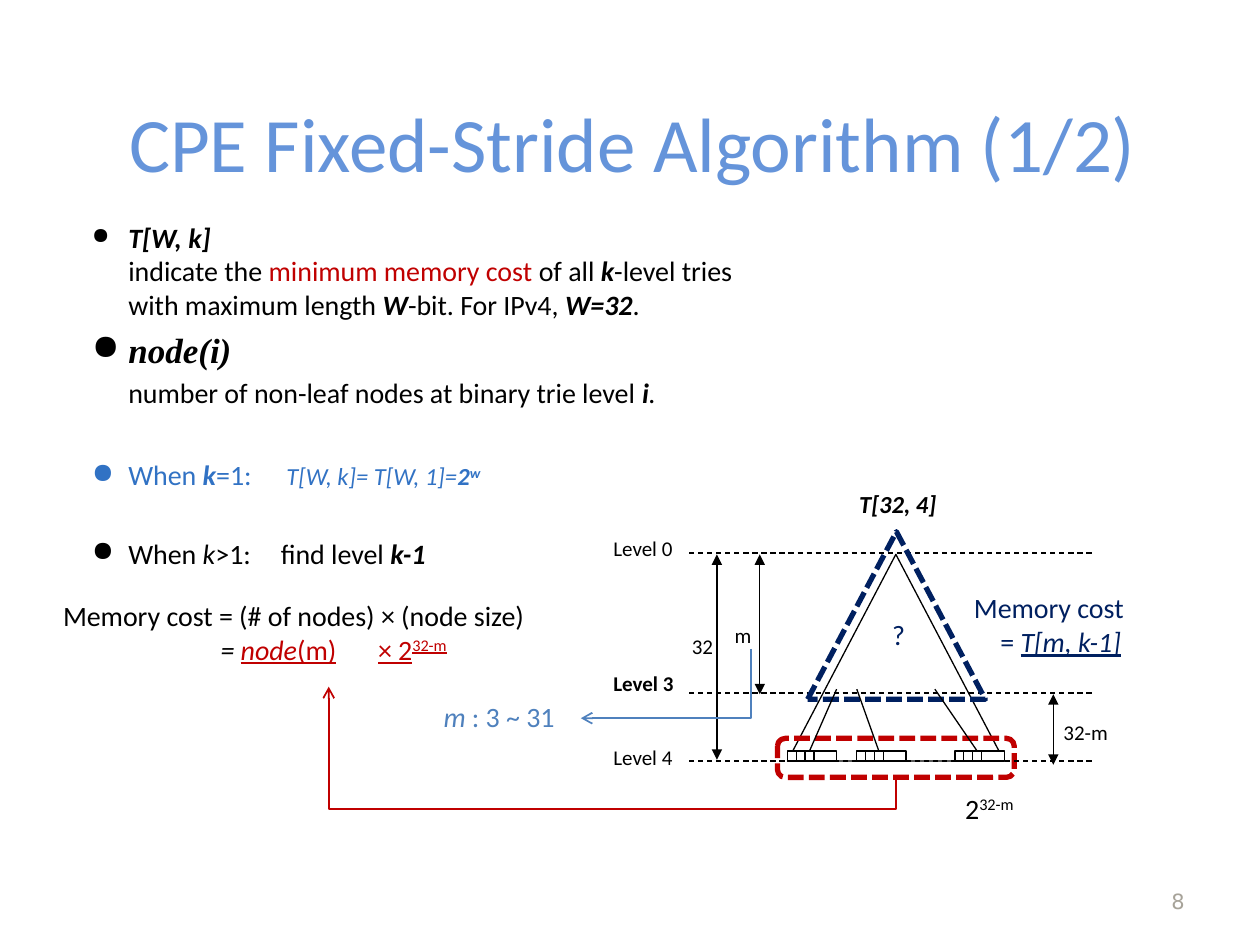
"""Build a slide on the fixed-stride trie algorithm with its level diagram."""
from copy import deepcopy
from pptx import Presentation
from pptx.dml.color import RGBColor
from pptx.enum.dml import MSO_LINE
from pptx.enum.shapes import MSO_CONNECTOR, MSO_SHAPE
from pptx.enum.text import MSO_ANCHOR, PP_ALIGN
from pptx.oxml.ns import qn
from pptx.util import Inches, Pt
from lxml.etree import SubElement

BLACK = RGBColor(0, 0, 0)
WHITE = RGBColor(255, 255, 255)
RED = RGBColor(0xC0, 0, 0)
NAVY = RGBColor(0, 0x20, 0x60)
BLUE = RGBColor(0x31, 0x72, 0xC4)
STEEL = RGBColor(0x4F, 0x81, 0xBD)
SKY = RGBColor(0x65, 0x94, 0xDA)
GRAY = RGBColor(0xA7, 0xA3, 0x99)

TITLE = "CPE Fixed-Stride Algorithm (1/2)"
HANG = (0.29, -0.29)
BODY = [
    dict(runs=[("T[W, k]\n", "bi"), ("indicate the ", ""), ("minimum memory cost ", "", RED),
               ("of all ", ""), ("k", "bi"), ("-level tries\nwith maximum length ", ""),
               ("W", "bi"), ("-bit. For IPv4, ", ""), ("W=32", "bi"), (".", "")],
         indent=HANG, before=3, bullet=80),
    dict(runs=[("node(i)", "bi", BLACK, 20, "Times New Roman")],
         indent=HANG, before=4, bullet=100),
    dict(runs=[("number of non-leaf nodes at binary trie level ", ""), ("i", "bi"), (".", "i")],
         indent=(0.29, 0), before=3),
    dict(runs=[("When ", "", BLUE), ("k", "bi", BLUE), ("=1:", "", BLUE),
               ("\t T[W, k]= T[W, 1]=", "i", BLUE, 14), ("2", "bi", BLUE, 14),
               ("w", "bi^", BLUE, 14)],
         indent=HANG, before=28, bullet=100),
    dict(runs=[("When ", ""), ("k", "i"), (">1:\tfind level ", ""), ("k-1", "bi")],
         indent=HANG, before=25.5, bullet=100),
]
COST = [
    dict(runs=[("Memory cost = (# of nodes) × (node size)", "")]),
    dict(runs=[("= ", "i"), ("node", "iu", RED), ("(m)\t× 2", "u", RED), ("32-m", "u^", RED)],
         indent=(0, 1.25), tab=2.52),
]
SUB = [
    dict(runs=[("Memory cost", "", NAVY)]),
    dict(runs=[("= ", "", NAVY), ("T[m, k-1]", "iu", NAVY)], indent=(0, 0.21)),
]
PAD, TIGHT, FLUSH = (0.1, 0.05, 0.1, 0.05), (0, 0, 0.1, 0.05), (0, 0, 0, 0)
LABELS = [
    ((4.77, 4.2, 0.7, 0.29), PAD, [("Level 0", "", BLACK, 12)]),
    ((4.77, 5.27, 0.86, 0.3), PAD, [("Level 3", "b", BLACK, 12)]),
    ((4.77, 5.86, 0.7, 0.26), PAD, [("Level 4", "", BLACK, 12)]),
    ((5.83, 4.94, 0.27, 0.22), TIGHT, [("m", "", BLACK, 12)]),
    ((5.49, 5.03, 0.28, 0.31), TIGHT, [("32", "", BLACK, 12)]),
    ((8.44, 5.71, 0.55, 0.31), TIGHT, [("32-m", "", BLACK, 12)]),
    ((7.08, 4.9, 0.27, 0.31), TIGHT, [("?", "", NAVY)]),
    ((3.52, 5.55, 1.09, 0.31), FLUSH, [("m", "i", STEEL), (" : 3 ~ 31", "", STEEL)]),
    ((6.72, 3.83, 1.02, 0.34), PAD, [("T[32, 4]", "bi", BLACK, 14)]),
    ((7.66, 6.28, 0.55, 0.31), TIGHT, [("2", ""), ("32-m", "^")]),
]
SPANS = [(6.03, 4.4, 5.51), (8.36, 5.51, 6.07), (5.69, 4.4, 6.03)]
LEVELS = [4.39, 5.5, 6.04]
NODES = [(6.25, 2, 6.64), (6.8, 2, 6.8), (7.58, 2, 7.42)]


def style(run, text, flags, color=BLACK, size=16, face="Calibri"):
    run.text = text
    font = run.font
    font.name, font.size, font.color.rgb = face, Pt(size), color
    font.bold, font.italic, font.underline = ("b" in flags, "i" in flags, "u" in flags)
    if "^" in flags:
        run._r.get_or_add_rPr().set("baseline", "30000")


def write(para, runs, indent=None, before=0, bullet=None, tab=None):
    para.space_before = Pt(before)
    props = para._p.get_or_add_pPr()
    if indent:
        props.set("marL", str(Inches(indent[0])))
        props.set("indent", str(Inches(indent[1])))
    if bullet:
        SubElement(props, qn("a:buSzPct"), val=str(bullet * 1000))
        SubElement(props, qn("a:buChar"), char="●")
    if tab:
        tabs = SubElement(props, qn("a:tabLst"))
        SubElement(tabs, qn("a:tab"), pos=str(Inches(tab)), algn="l")
    for text, *rest in runs:
        for i, part in enumerate(text.split("\n")):
            if i:
                para.add_line_break()
                para._p[-1].append(deepcopy(run._r.rPr))
            if part:
                run = para.add_run()
                style(run, part, *rest)


def note(at, pad, paras):
    box = slide.shapes.add_textbox(*map(Inches, at))
    frame = box.text_frame
    frame.word_wrap = True
    (frame.margin_left, frame.margin_top,
     frame.margin_right, frame.margin_bottom) = map(Inches, pad)
    for i, para in enumerate(paras):
        write(frame.add_paragraph() if i else frame.paragraphs[0], **para)
    return frame


def draw(kind, at, color=BLACK, width=0.75, dash=None, fill=None):
    shape = slide.shapes.add_shape(kind, *map(Inches, at))
    shape.shadow.inherit = False
    if fill is None:
        shape.fill.background()
    else:
        shape.fill.solid()
        shape.fill.fore_color.rgb = fill
    shape.line.color.rgb, shape.line.width = color, Pt(width)
    if dash:
        shape.line.dash_style = dash
    return shape


def link(ends, color=BLACK, width=0.75, dash=None, head=None, tail=None,
         kind=MSO_CONNECTOR.STRAIGHT):
    line = slide.shapes.add_connector(kind, *map(Inches, ends))
    line.line.color.rgb, line.line.width = color, Pt(width)
    if dash:
        line.line.dash_style = dash
    pen = line.line._get_or_add_ln()
    for tag, tip in (("a:headEnd", head), ("a:tailEnd", tail)):
        if tip:
            SubElement(pen, qn(tag), type=tip)
    SubElement(line._element.spPr, qn("a:effectLst"))
    return line


def elbow(ends, color, preset, bend=None):
    line = link(ends, color, 1, tail="arrow", kind=MSO_CONNECTOR.ELBOW)
    props = line._element.spPr
    props.find(qn("a:xfrm")).set("rot", str(90 * 60000))
    geom = props.find(qn("a:prstGeom"))
    geom.set("prst", preset)
    if bend is not None:
        guides = geom.find(qn("a:avLst"))
        SubElement(guides, qn("a:gd"), name="adj1", fmla=f"val {bend}")


deck = Presentation()
deck.slide_width, deck.slide_height = Inches(10), Inches(7.5)
slide = deck.slides.add_slide(deck.slide_layouts[5])
title = slide.shapes.title
title.left, title.top, title.width, title.height = map(Inches, (0.55, 0.55, 8.95, 1.15))
title.text_frame.text = TITLE
title.text_frame.vertical_anchor = MSO_ANCHOR.MIDDLE
head = title.text_frame.paragraphs[0]
head.alignment = PP_ALIGN.CENTER
style(head.runs[0], TITLE, "", SKY, 44)

note((0.63, 1.7, 8.95, 4.83), PAD, BODY)
draw(MSO_SHAPE.ISOSCELES_TRIANGLE, (6.25, 4.4, 1.72, 1.64))
for x, top, low in SPANS:
    link((x, top, x, low), head="triangle", tail="triangle")
note((7.73, 4.69, 1.56, 0.55), TIGHT, SUB)
note((0.5, 4.75, 4.22, 0.7), FLUSH, COST)
page = note((7.17, 6.95, 2.33, 0.4), PAD, [dict(runs=[("8", "", GRAY, 12, "DejaVu Sans")])])
page.vertical_anchor = MSO_ANCHOR.MIDDLE
page.paragraphs[0].alignment = PP_ALIGN.RIGHT

leaf = draw(MSO_SHAPE.ROUNDED_RECTANGLE, (6.17, 5.86, 1.88, 0.31), RED, 3, MSO_LINE.SQUARE_DOT)
leaf.adjustments[0] = 0.2
for y in LEVELS:
    link((5.47, y, 8.67, y), dash=MSO_LINE.DASH)
draw(MSO_SHAPE.ISOSCELES_TRIANGLE, (6.41, 4.22, 1.41, 1.33), NAVY, 3, MSO_LINE.SQUARE_DOT)
elbow((5.22, 3.56, 4.5, 8.06), RED, "bentConnector3", -34600)

for x, count, top in NODES:
    draw(MSO_SHAPE.RECTANGLE, (x, 5.96, 0.39, 0.08), fill=WHITE)
    for i in range(1, count + 1):
        cell = draw(MSO_SHAPE.RECTANGLE, (x + 0.07 * i, 5.96, 0.07, 0.08), fill=WHITE)
    edge = link((x + 0.18, 5.96, top, 5.47))
    edge.begin_connect(cell, 0)

elbow((5.01, 4.75, 5.56, 6.1), STEEL, "bentConnector2")
for at, pad, runs in LABELS:
    note(at, pad, [dict(runs=runs)])

deck.save("out.pptx")
